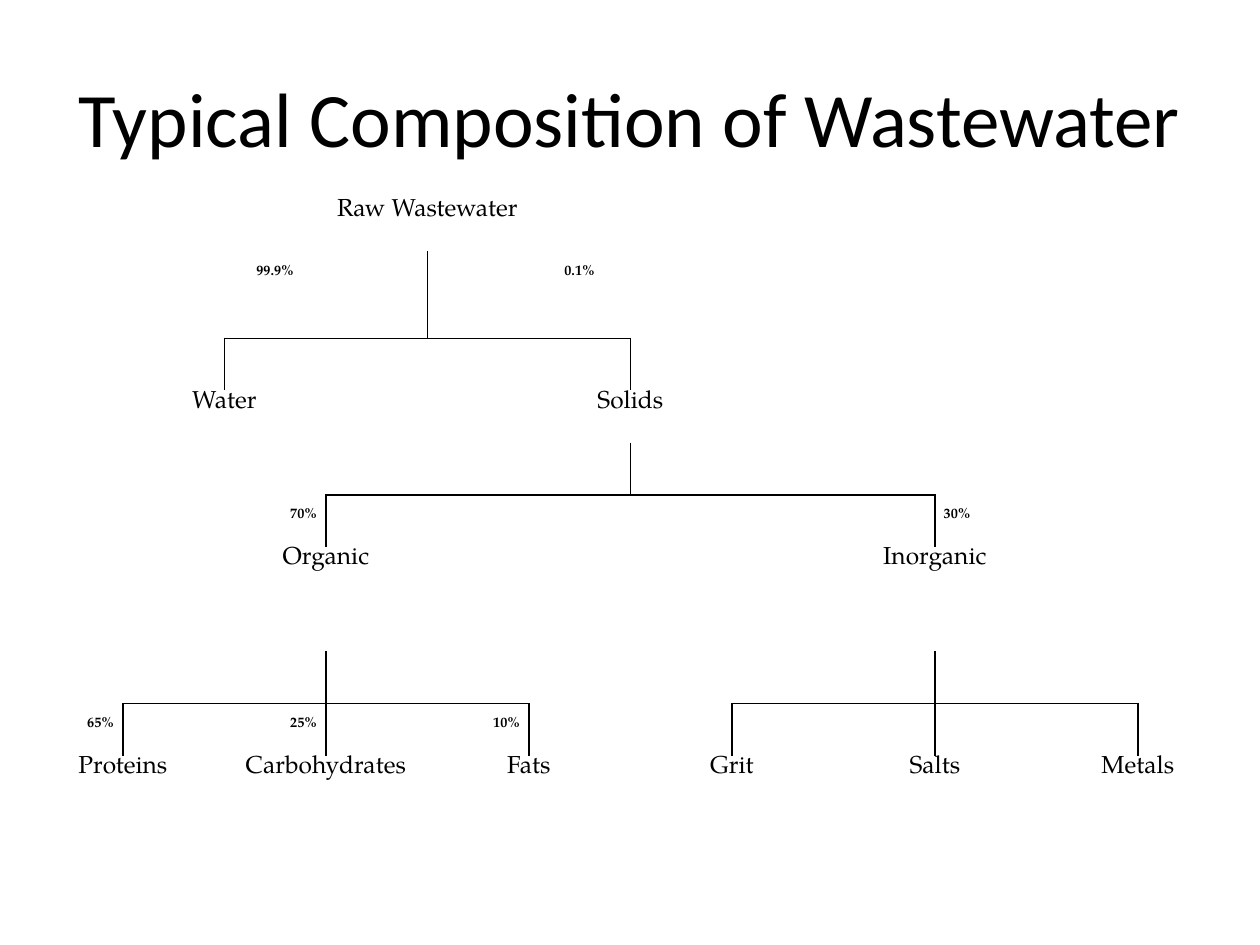
import lxml.etree
import pptx
import pptx.dml.color
import pptx.enum.text
import pptx.oxml.ns
import pptx.util

Inches = pptx.util.Inches
Pt = pptx.util.Pt
ALIGN = pptx.enum.text.PP_ALIGN
INK = "000000"
NO_GRID_STYLE = "{2D5ABB26-0587-4C30-8999-92F81FD0307C}"

COLUMNS = 12
ROW_WEIGHTS = [1, 5 / 3, 1, 1, 1, 1, 2, 1, 1, 2]

COMPONENTS = [
    (0, 2, 4, "Raw Wastewater"),
    (3, 1, 2, "Water"),
    (3, 5, 2, "Solids"),
    (6, 2, 2, "Organic"),
    (6, 8, 2, "Inorganic"),
    (9, 0, 2, "Proteins"),
    (9, 2, 2, "Carbohydrates"),
    (9, 4, 2, "Fats"),
    (9, 6, 2, "Grit"),
    (9, 8, 2, "Salts"),
    (9, 10, 2, "Metals"),
]
SHARES = [
    (1, 2, "99.9%", ALIGN.CENTER),
    (1, 5, "0.1%", ALIGN.CENTER),
    (5, 2, "70%", ALIGN.RIGHT),
    (5, 9, "30%", ALIGN.LEFT),
    (8, 0, "65%", ALIGN.RIGHT),
    (8, 2, "25%", ALIGN.RIGHT),
    (8, 4, "10%", ALIGN.RIGHT),
]
STEMS = {1: [4], 2: [2, 6], 4: [6], 5: [3, 9], 7: [3, 9], 8: range(1, 12, 2)}
RAILS = {2: range(2, 6), 5: range(3, 9), 8: [*range(1, 5), *range(7, 11)]}


def color(value):
    return pptx.dml.color.RGBColor.from_string(value)


def apply_format(target, values):
    for name, value in values.items():
        setattr(target, name, value)


def write(frame, text, align, font, size, bold=False):
    paragraph = frame.paragraphs[0]
    paragraph.alignment = align
    run = paragraph.add_run()
    run.text = text
    apply_format(run.font, {"name": font, "size": Pt(size), "bold": bold})
    run.font.color.rgb = color(INK)
    return run


def add_title(slide, text):
    title = slide.shapes.add_textbox(Inches(0.5), Inches(0.3), Inches(9), Inches(1.25))
    apply_format(title.text_frame, {
        "word_wrap": True,
        "vertical_anchor": pptx.enum.text.MSO_ANCHOR.MIDDLE,
    })
    write(title.text_frame, text, ALIGN.CENTER, "Calibri", 44)


def add_border(cell, side, drawn):
    qn = pptx.oxml.ns.qn
    properties = cell._tc.get_or_add_tcPr()
    line = lxml.etree.SubElement(properties, qn("a:ln" + side), w=str(Pt(1)))
    fill = lxml.etree.SubElement(line, qn("a:solidFill" if drawn else "a:noFill"))
    if drawn:
        lxml.etree.SubElement(fill, qn("a:srgbClr"), val=INK)


def format_cell(cell, row, column):
    edges = {
        "L": column in STEMS.get(row, []),
        "R": column + 1 in STEMS.get(row, []),
        "T": column in RAILS.get(row, []),
        "B": column in RAILS.get(row + 1, []),
    }
    for side, drawn in edges.items():
        add_border(cell, side, drawn)
    cell.fill.background()
    apply_format(cell, {
        "margin_left": Inches(0.07),
        "margin_right": Inches(0.07),
        "margin_top": 0,
        "margin_bottom": 0,
    })


def add_tree(slide):
    width, height = Inches(9.67), Inches(5.25)
    tree = slide.shapes.add_table(
        len(ROW_WEIGHTS), COLUMNS, Inches(0.17), Inches(1.58), width, height
    ).table
    apply_format(tree, {"first_row": False, "horz_banding": False})
    tree._tbl.tblPr.find(pptx.oxml.ns.qn("a:tableStyleId")).text = NO_GRID_STYLE
    for column in tree.columns:
        column.width = int(width / COLUMNS)
    for row, weight in zip(tree.rows, ROW_WEIGHTS):
        row.height = int(height * weight / sum(ROW_WEIGHTS))
    for row in range(len(ROW_WEIGHTS)):
        for column in range(COLUMNS):
            format_cell(tree.cell(row, column), row, column)
    return tree


def add_component(tree, row, column, span, text):
    cell = tree.cell(row, column)
    cell.merge(tree.cell(row, column + span - 1))
    write(cell.text_frame, text, ALIGN.CENTER, "TeX Gyre Pagella", 14)


def add_share(tree, row, column, text, align):
    frame = tree.cell(row, column).text_frame
    run = write(frame, text, align, "TeX Gyre Pagella", 14, True)
    run._r.get_or_add_rPr().set("baseline", "-25000")


def main():
    presentation = pptx.Presentation()
    apply_format(presentation, {"slide_width": Inches(10), "slide_height": Inches(7.5)})
    slide = presentation.slides.add_slide(presentation.slide_layouts[6])
    add_title(slide, "Typical Composition of Wastewater")
    tree = add_tree(slide)
    for component in COMPONENTS:
        add_component(tree, *component)
    for share in SHARES:
        add_share(tree, *share)
    presentation.save("out.pptx")


if __name__ == "__main__":
    main()
